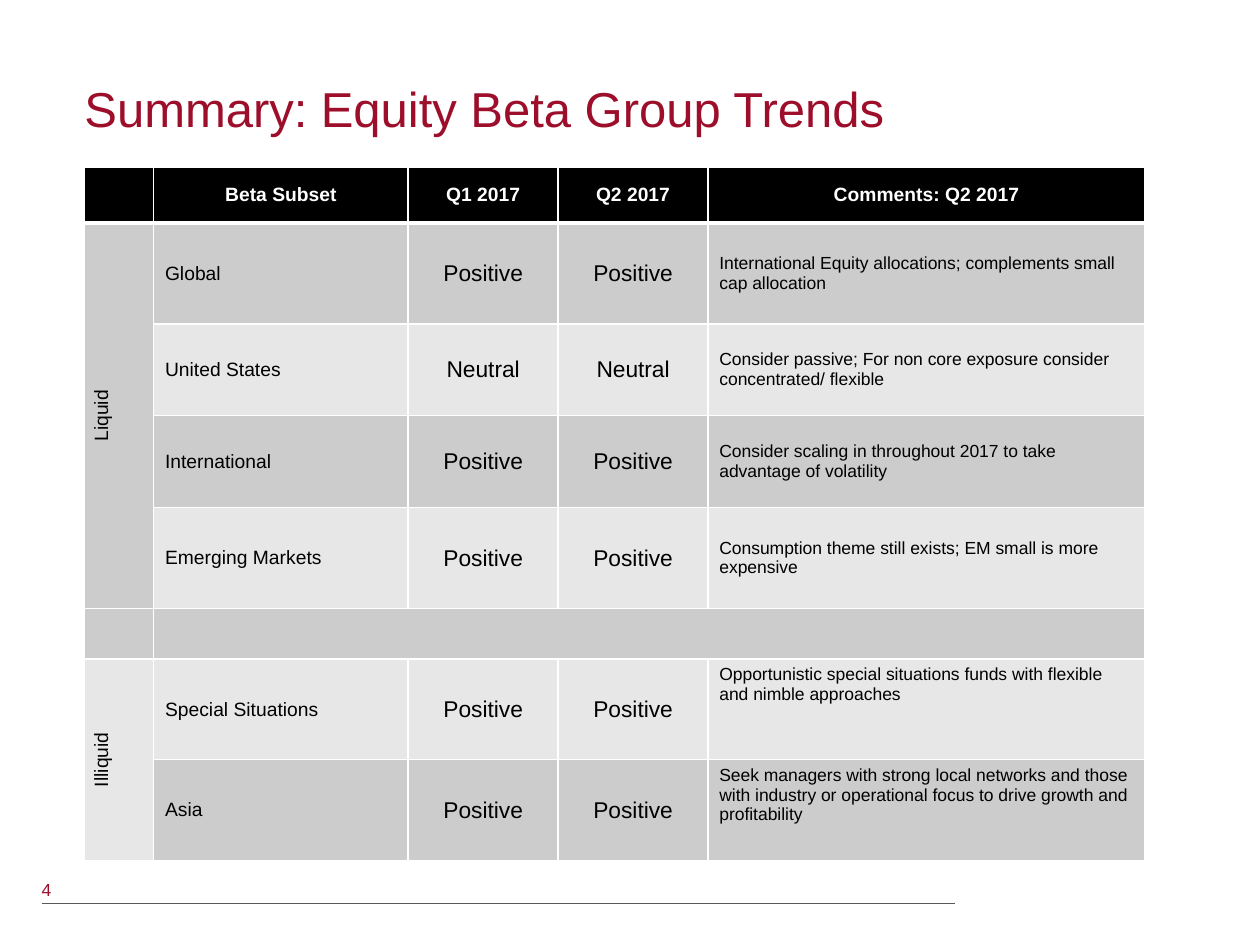
import pptx
import pptx.dml.color
import pptx.enum.shapes
import pptx.enum.text
import pptx.oxml
import pptx.oxml.ns
import pptx.util
from pptx.util import Inches

RGBColor = pptx.dml.color.RGBColor
Align = pptx.enum.text.PP_ALIGN
Anchor = pptx.enum.text.MSO_ANCHOR

CRIMSON = RGBColor(0x9D, 0x0E, 0x2B)
BLACK = RGBColor(0, 0, 0)
WHITE = RGBColor(0xFF, 0xFF, 0xFF)
RULE_GRAY = RGBColor(0x59, 0x59, 0x59)
DARK_BAND = RGBColor(0xCC, 0xCC, 0xCC)
LIGHT_BAND = RGBColor(0xE7, 0xE7, 0xE7)

COLUMN_WIDTHS = [0.55, 2.02, 1.19, 1.19, 3.47]
ROW_HEIGHTS = [0.44, 0.8, 0.73, 0.73, 0.8, 0.4, 0.8, 0.8]
ROWS = [
    ["", "Beta Subset", "Q1 2017", "Q2 2017", "Comments: Q2 2017"],
    ["Liquid", "Global", "Positive", "Positive",
     "International Equity allocations; complements small cap allocation"],
    ["", "United States", "Neutral", "Neutral",
     "Consider passive; For non core exposure consider concentrated/ flexible"],
    ["", "International", "Positive", "Positive",
     "Consider scaling in throughout 2017 to take advantage of volatility"],
    ["", "Emerging Markets", "Positive", "Positive",
     "Consumption theme still exists; EM small is more expensive"],
    [""] * 5,
    ["Illiquid", "Special Situations", "Positive", "Positive",
     "Opportunistic special situations funds with flexible and nimble approaches"],
    ["", "Asia", "Positive", "Positive",
     "Seek managers with strong local networks and those with industry or "
     "operational focus to drive growth and profitability"],
]
MERGES = [((1, 0), (4, 0)), ((5, 1), (5, 4)), ((6, 0), (7, 0))]
COLUMN_SIZES = [11, 11, 13, 13, 10]
COLUMN_ALIGNMENTS = [Align.CENTER, Align.LEFT, Align.CENTER, Align.CENTER, Align.LEFT]
SPACED_COMMENT_ROWS = (3, 4, 6)
TOP_COMMENT_ROWS = (6, 7)


class SlideBuilder:
    font_name = "Arial"

    def __init__(self, presentation):
        self.slide = presentation.slides.add_slide(presentation.slide_layouts[5])

    def style(self, paragraph, size, color, alignment=Align.LEFT, bold=False):
        paragraph.alignment = alignment
        paragraph.font.name = self.font_name
        paragraph.font.size = pptx.util.Pt(size)
        paragraph.font.color.rgb = color
        paragraph.font.bold = bold

    def fill_frame(self, shape, text, size, color, anchor):
        frame = shape.text_frame
        frame.margin_left = frame.margin_right = 0
        frame.margin_top = frame.margin_bottom = 0
        frame.word_wrap = True
        frame.vertical_anchor = anchor
        frame.text = text
        self.style(frame.paragraphs[0], size, color)

    def title(self, text, left, top, width, height):
        shape = self.slide.shapes.title
        shape.left, shape.top = Inches(left), Inches(top)
        shape.width, shape.height = Inches(width), Inches(height)
        self.fill_frame(shape, text, 28, CRIMSON, Anchor.BOTTOM)

    def text(self, text, left, top, width, height):
        shape = self.slide.shapes.add_textbox(
            Inches(left), Inches(top), Inches(width), Inches(height))
        self.fill_frame(shape, text, 10, CRIMSON, Anchor.TOP)

    def rule(self, left, right, top):
        line = self.slide.shapes.add_connector(
            pptx.enum.shapes.MSO_CONNECTOR.STRAIGHT,
            Inches(left), Inches(top), Inches(right), Inches(top))
        line.line.color.rgb = RULE_GRAY
        line.line.width = pptx.util.Pt(0.75)
        properties = line._element.spPr
        properties.append(pptx.oxml.parse_xml(
            f'<a:effectLst {pptx.oxml.ns.nsdecls("a")}/>'))

    def borders(self, cell, top_width, bottom_width):
        properties = cell._tc.get_or_add_tcPr()
        widths = {"lnL": 1, "lnR": 1, "lnT": top_width, "lnB": bottom_width}
        for tag, width in widths.items():
            properties.append(pptx.oxml.parse_xml(
                f'<a:{tag} {pptx.oxml.ns.nsdecls("a")} w="{pptx.util.Pt(width)}">'
                f'<a:solidFill><a:srgbClr val="{WHITE}"/></a:solidFill></a:{tag}>'))

    def cell(self, cell, text, row, column):
        header = row == 0
        self.borders(cell, 3 if row == 1 else 1, 3 if header else 1)
        cell.fill.solid()
        cell.fill.fore_color.rgb = (
            BLACK if header else DARK_BAND if row % 2 else LIGHT_BAND)
        cell.margin_left = cell.margin_right = Inches(0.09)
        cell.margin_top = cell.margin_bottom = Inches(0.05)
        comment = column == 4
        cell.vertical_anchor = (
            Anchor.TOP if comment and row in TOP_COMMENT_ROWS else Anchor.MIDDLE)
        cell.text = text
        paragraph = cell.text_frame.paragraphs[0]
        if header:
            self.style(paragraph, 11, WHITE, Align.CENTER, True)
        else:
            self.style(paragraph, COLUMN_SIZES[column], BLACK, COLUMN_ALIGNMENTS[column])
        if comment and row in SPACED_COMMENT_ROWS:
            paragraph.space_after = pptx.util.Pt(6)
        if column == 0 and text:
            cell._tc.get_or_add_tcPr().set("vert", "vert270")

    def table(self, rows, left, top):
        table = self.slide.shapes.add_table(
            len(rows), len(COLUMN_WIDTHS), Inches(left), Inches(top),
            Inches(sum(COLUMN_WIDTHS)), Inches(sum(ROW_HEIGHTS))).table
        for column, width in zip(table.columns, COLUMN_WIDTHS):
            column.width = Inches(width)
        for row, height in zip(table.rows, ROW_HEIGHTS):
            row.height = Inches(height)
        for row_index, texts in enumerate(rows):
            for column_index, text in enumerate(texts):
                self.cell(table.cell(row_index, column_index), text,
                          row_index, column_index)
        for first, last in MERGES:
            table.cell(*first).merge(table.cell(*last))


def main():
    presentation = pptx.Presentation()
    presentation.slide_width = Inches(10)
    presentation.slide_height = Inches(7.5)
    builder = SlideBuilder(presentation)
    builder.rule(0.33, 7.58, 7.17)
    builder.title("Summary: Equity Beta Group Trends", 0.67, 0.17, 8.83, 0.92)
    builder.text("4", 0.33, 6.98, 0.92, 0.33)
    builder.table(ROWS, 0.67, 1.33)
    presentation.save("out.pptx")


if __name__ == "__main__":
    main()
